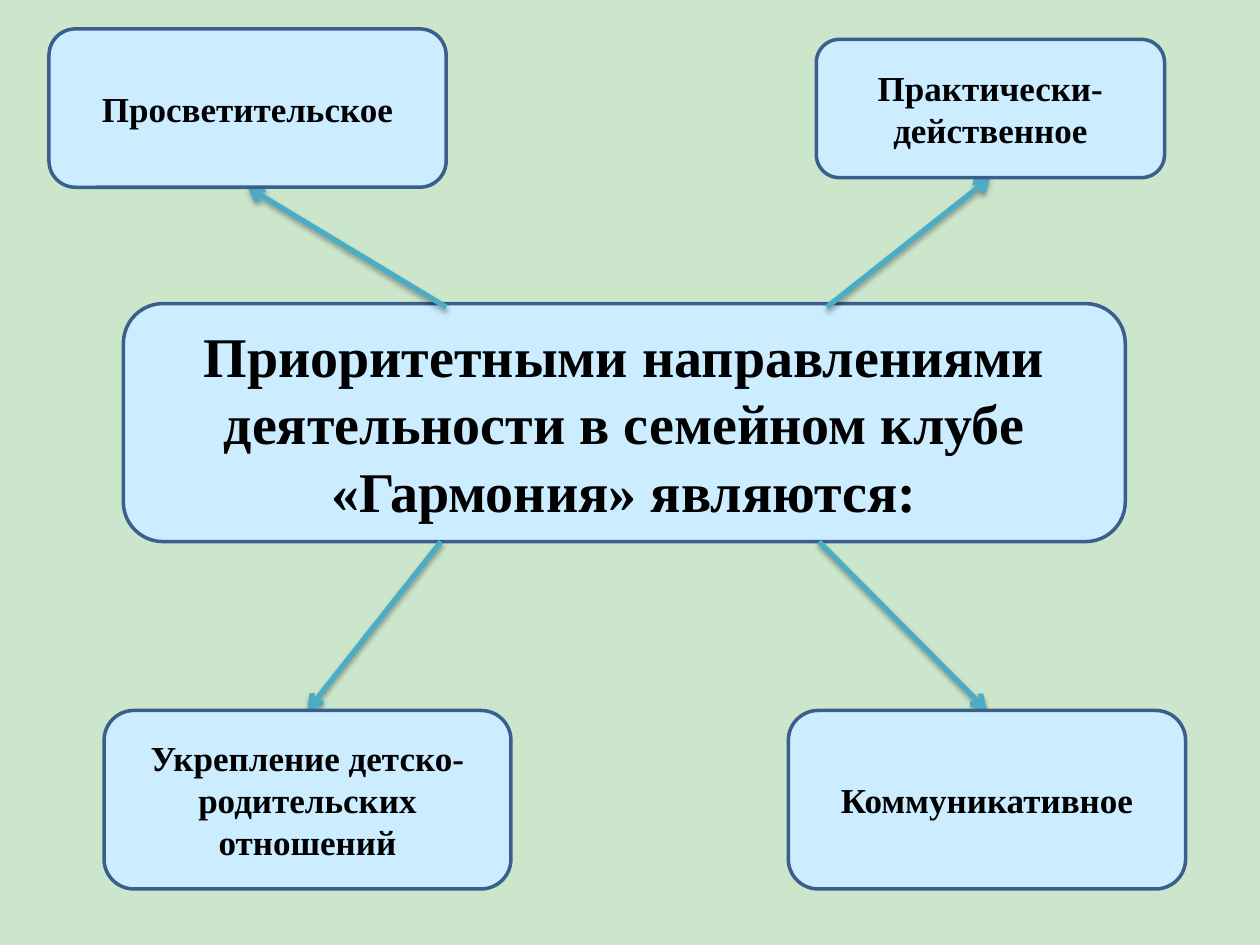
from dataclasses import dataclass

import lxml.etree
import pptx
import pptx.dml.color
import pptx.enum.shapes
import pptx.enum.text
import pptx.oxml
import pptx.oxml.ns
import pptx.util

Pt = pptx.util.Pt


@dataclass(frozen=True)
class Theme:
    background: str = "CCE6CC"
    box_fill: str = "CCECFF"
    box_line: str = "3A5F8C"
    arrow: str = "4BACC6"
    text: str = "000000"
    font: str = "Times New Roman"
    title_size: float = 32
    label_size: float = 20
    box_line_width: float = 2
    arrow_width: float = 3


@dataclass(frozen=True)
class Box:
    text: str
    left: float
    top: float
    width: float
    height: float


@dataclass(frozen=True)
class Direction:
    box: Box
    arrow_start: tuple[float, float]
    side: int


THEME = Theme()
TOP, BOTTOM = 0, 2  # connection sites of a box

CENTRE = Box(
    "Приоритетными направлениями деятельности в семейном клубе «Гармония» являются:",
    70.5, 173.5, 572.5, 136,
)
DIRECTIONS = [
    Direction(Box("Просветительское", 28, 16.5, 227, 90.5), (255, 175.5), BOTTOM),
    Direction(Box("Практически-действенное", 466.5, 22.5, 199, 79), (472.5, 175.5), BOTTOM),
    Direction(Box("Укрепление детско-родительских отношений", 59.5, 406, 232.5, 102), (252, 309.5), TOP),
    Direction(Box("Коммуникативное", 450.5, 406, 227, 102), (468, 309.5), TOP),
]

ARROW_SHADOW = (
    f'<a:effectLst {pptx.oxml.ns.nsdecls("a")}>'
    f'<a:outerShdw blurRad="{Pt(3.1)}" dist="{Pt(1.8)}" dir="5400000" rotWithShape="0">'
    '<a:srgbClr val="000000"><a:alpha val="35000"/></a:srgbClr>'
    "</a:outerShdw></a:effectLst>"
)


def rgb(value: str) -> pptx.dml.color.RGBColor:
    return pptx.dml.color.RGBColor.from_string(value)


def add_box(slide, box: Box, size: float):
    shape = slide.shapes.add_shape(
        pptx.enum.shapes.MSO_SHAPE.ROUNDED_RECTANGLE,
        Pt(box.left), Pt(box.top), Pt(box.width), Pt(box.height),
    )
    shape.shadow.inherit = False
    shape.fill.solid()
    shape.fill.fore_color.rgb = rgb(THEME.box_fill)
    shape.line.color.rgb = rgb(THEME.box_line)
    shape.line.width = Pt(THEME.box_line_width)

    text_frame = shape.text_frame
    text_frame.word_wrap = True
    text_frame.vertical_anchor = pptx.enum.text.MSO_ANCHOR.MIDDLE
    paragraph = text_frame.paragraphs[0]
    paragraph.text = box.text
    paragraph.alignment = pptx.enum.text.PP_ALIGN.CENTER
    paragraph.font.name = THEME.font
    paragraph.font.size = Pt(size)
    paragraph.font.bold = True
    paragraph.font.color.rgb = rgb(THEME.text)
    return shape


def add_arrow(slide, start: tuple[float, float]):
    """Add an arrow at its start; connecting its end gives it its length."""
    x, y = map(Pt, start)
    connector = slide.shapes.add_connector(
        pptx.enum.shapes.MSO_CONNECTOR.STRAIGHT, x, y, x, y
    )
    connector.line.color.rgb = rgb(THEME.arrow)
    connector.line.width = Pt(THEME.arrow_width)
    properties = connector.element.spPr
    lxml.etree.SubElement(
        properties.get_or_add_ln(), pptx.oxml.ns.qn("a:tailEnd"), type="arrow"
    )
    properties.append(pptx.oxml.parse_xml(ARROW_SHADOW))
    return connector


def add_direction(slide, direction: Direction) -> None:
    # The arrow comes first so that the box covers its tip
    arrow = add_arrow(slide, direction.arrow_start)
    shape = add_box(slide, direction.box, THEME.label_size)
    arrow.end_connect(shape, direction.side)


def main() -> None:
    presentation = pptx.Presentation()
    presentation.slide_width = Pt(720)
    presentation.slide_height = Pt(540)
    slide = presentation.slides.add_slide(presentation.slide_layouts[6])

    # Background
    slide.background.fill.solid()
    slide.background.fill.fore_color.rgb = rgb(THEME.background)

    # Central statement and the four directions around it
    add_box(slide, CENTRE, THEME.title_size)
    for direction in DIRECTIONS:
        add_direction(slide, direction)

    presentation.save("out.pptx")


if __name__ == "__main__":
    main()
